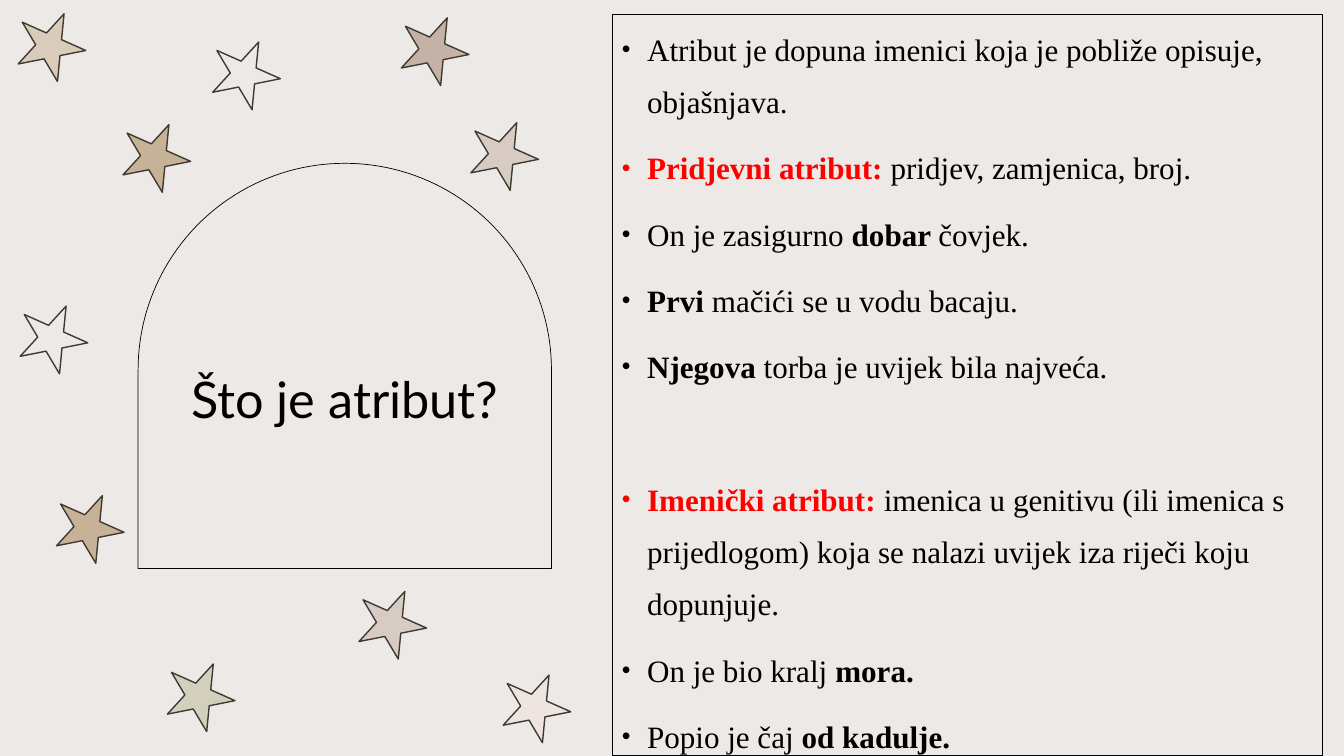
from math import cos, pi, sin

from lxml.etree import SubElement
from pptx import Presentation
from pptx.dml.color import RGBColor
from pptx.enum.shapes import MSO_SHAPE
from pptx.enum.text import MSO_ANCHOR, PP_ALIGN
from pptx.oxml.ns import qn
from pptx.util import Inches, Pt

BACKGROUND = RGBColor(0xED, 0xE9, 0xE7)
BLACK = RGBColor(0, 0, 0)
RED = RGBColor(0xFF, 0, 0)
STAR_LINE = RGBColor(0x3C, 0x3A, 0x31)
TAN = RGBColor(0xC7, 0xB2, 0x98)
ROSE = RGBColor(0xD7, 0xCB, 0xC3)
SAND = RGBColor(0xDA, 0xCC, 0xBA)
BLUSH = RGBColor(0xEE, 0xE4, 0xE0)
SAGE = RGBColor(0xD3, 0xCF, 0xBD)
MOCHA = RGBColor(0xC3, 0xB2, 0xA5)

presentation = Presentation()
presentation.slide_width = Inches(13.33)
presentation.slide_height = Inches(7.5)
slide = presentation.slides.add_slide(presentation.slide_layouts[6])
slide.background.fill.solid()
slide.background.fill.fore_color.rgb = BACKGROUND

# Title in an arch
title = slide.shapes.add_textbox(Inches(1.75), Inches(2.64), Inches(3.34), Inches(2.69))
title.text_frame.word_wrap = True
title.text_frame.vertical_anchor = MSO_ANCHOR.MIDDLE
heading = title.text_frame.paragraphs[0]
heading.text = "Što je atribut?"
heading.alignment = PP_ALIGN.CENTER
heading.line_spacing = 0.9
heading.font.name = "Lato"
heading.font.size = Pt(36)
heading.font.color.rgb = BLACK

center_x, center_y = Inches(3.42), Inches(3.67)
radius, arch_bottom = Inches(2.05), Inches(5.64)
arc_steps = 90
arc = [
    (center_x - radius * cos(pi * step / arc_steps),
     center_y - radius * sin(pi * step / arc_steps))
    for step in range(arc_steps + 1)
]
builder = slide.shapes.build_freeform(center_x - radius, arch_bottom)
builder.add_line_segments([*arc, (center_x + radius, arch_bottom)], close=True)
arch = builder.convert_to_shape()
arch.shadow.inherit = False
arch.fill.background()
arch.line.color.rgb = BLACK
arch.line.width = Pt(0.5)

# Definitions and examples: (space before, runs of (text, bold, colour))
points = [
    (0, [("Atribut je dopuna imenici koja je pobliže opisuje, objašnjava.", False, BLACK)]),
    (10, [("Pridjevni atribut: ", True, RED),
          ("pridjev, zamjenica, broj.", False, BLACK)]),
    (10, [("On je zasigurno ", False, BLACK), ("dobar ", True, BLACK),
          ("čovjek.", False, BLACK)]),
    (10, [("Prvi", True, BLACK), (" mačići se u vodu bacaju.", False, BLACK)]),
    (10, [("Njegova", True, BLACK), (" torba je uvijek bila najveća.", False, BLACK)]),
    (57.5, [("Imenički atribut: ", True, RED),
            ("imenica u genitivu (ili imenica s prijedlogom) koja se nalazi "
             "uvijek iza riječi koju dopunjuje.", False, BLACK)]),
    (10, [("On je bio kralj ", False, BLACK), ("mora.", True, BLACK)]),
    (10, [("Popio je čaj ", False, BLACK), ("od kadulje.", True, BLACK)]),
]
panel = slide.shapes.add_shape(
    MSO_SHAPE.RECTANGLE, Inches(6.07), Inches(0.14), Inches(7.05), Inches(7.36))
panel.shadow.inherit = False
panel.fill.background()
panel.line.color.rgb = BLACK
panel.line.width = Pt(0.75)
panel_text = panel.text_frame
panel_text.word_wrap = True
panel_text.vertical_anchor = MSO_ANCHOR.MIDDLE
for index, (space_before, runs) in enumerate(points):
    point = panel_text.add_paragraph() if index else panel_text.paragraphs[0]
    point.alignment = PP_ALIGN.LEFT
    point.line_spacing = 1.4
    point.space_before = Pt(space_before)
    properties = point._p.get_or_add_pPr()
    properties.set("marL", str(Inches(0.25)))
    properties.set("indent", str(-Inches(0.25)))
    SubElement(properties, qn("a:buSzPct"), val="80000")
    SubElement(properties, qn("a:buFont"), typeface="Arial")
    SubElement(properties, qn("a:buChar"), char="•")
    point.font.name = "Times New Roman"
    point.font.size = Pt(22.2)
    for text, bold, color in runs:
        run = point.add_run()
        run.text = text
        run.font.bold = bold
        run.font.color.rgb = color

# Scattered stars
stars = [
    (2.09, 0.39, BACKGROUND), (1.2, 1.21, TAN), (3.54, 5.84, ROSE),
    (0.16, 0.11, SAND), (4.97, 6.67, BLUSH), (1.64, 6.56, SAGE),
    (4.65, 1.19, ROSE), (3.96, 0.15, MOCHA), (0.18, 3.01, BACKGROUND),
    (0.54, 4.89, TAN),
]
for left, top, color in stars:
    star = slide.shapes.add_shape(
        MSO_SHAPE.STAR_5_POINT, Inches(left), Inches(top), Inches(0.69), Inches(0.64))
    star.rotation = 24
    star.shadow.inherit = False
    star.fill.solid()
    star.fill.fore_color.rgb = color
    star.line.color.rgb = STAR_LINE
    star.line.width = Pt(1)

presentation.save("out.pptx")
